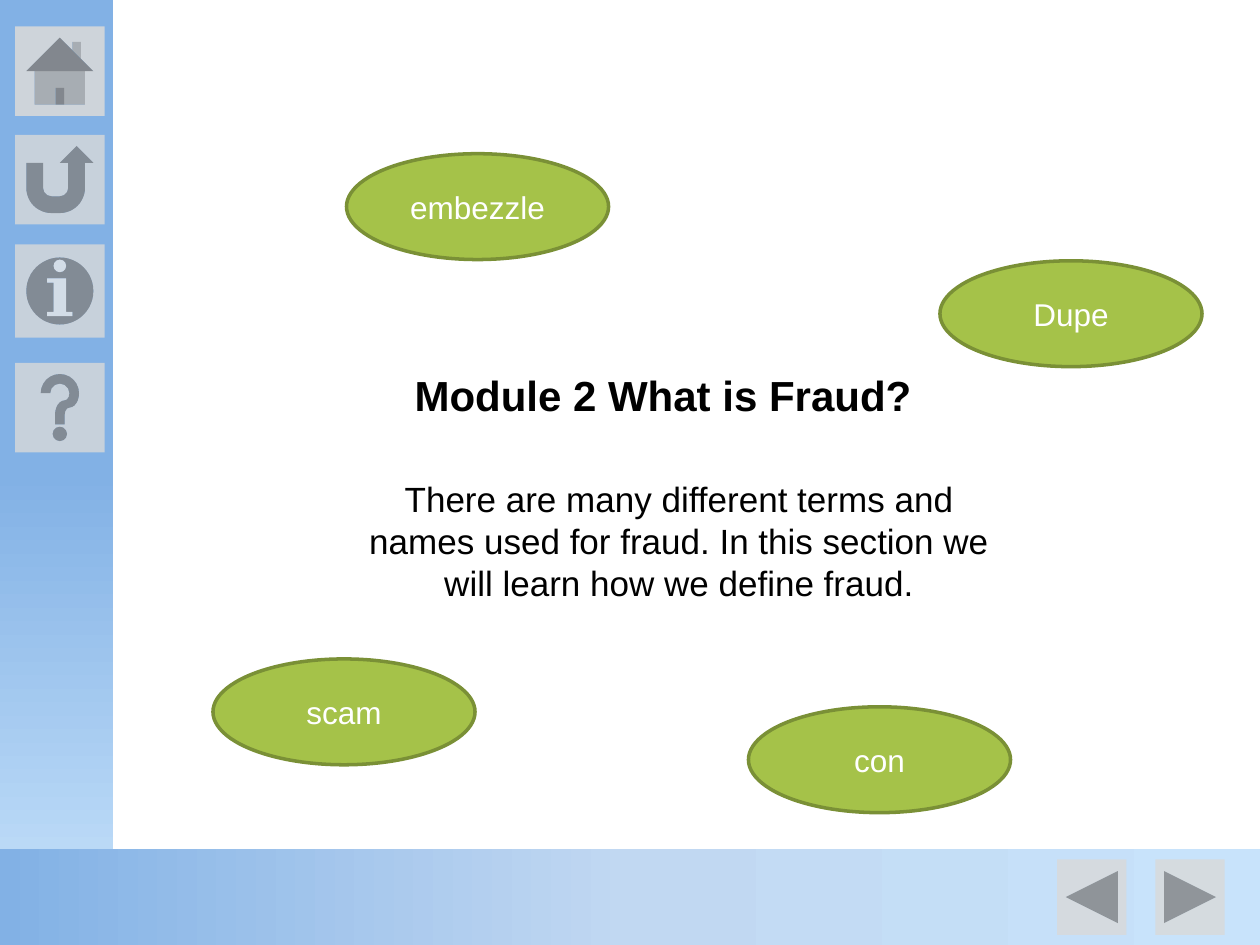
"""Build the opening slide of the fraud module with its navigation bars."""
from copy import deepcopy

from lxml.etree import SubElement
from pptx import Presentation
from pptx.dml.color import RGBColor
from pptx.enum.shapes import MSO_SHAPE as SHAPE
from pptx.enum.text import MSO_ANCHOR as ANCHOR, MSO_AUTO_SIZE as FIT, PP_ALIGN as ALIGN
from pptx.oxml.ns import qn
from pptx.util import Inches, Pt

COLORS = {"blue": "82B1E5", "mist": "C1D8F2", "sky": "C8E3FB", "button": "D9D9D9",
          "green": "A5C249", "olive": "7A9036", "white": "FFFFFF", "black": "000000"}


def add_shape(kind, *bounds):
    shape = page.shapes.add_shape(kind, *map(Inches, bounds))
    shape.shadow.inherit = False
    return shape


def set_text(shape, text, size, color, align, bold=False):
    frame = shape.text_frame
    frame.text = text
    para = frame.paragraphs[0]
    para.alignment = align
    font = para.runs[0].font
    font.name, font.size, font.bold = "Arial", Pt(size), bold
    font.color.rgb = RGBColor.from_string(COLORS[color])
    return frame


deck = Presentation()
deck.slide_width, deck.slide_height = Inches(10), Inches(7.5)
page = deck.slides.add_slide(deck.slide_layouts[5])

bars = [
    ((-3.3, 3.3, 7.5, 0.9), 270, ("blue", "blue", "sky")),
    ((0, 6.74, 10, 0.79), 0, ("sky", "mist", "blue")),
]
for bounds, rotation, names in bars:
    bar = add_shape(SHAPE.RECTANGLE, *bounds)
    bar.rotation = rotation
    bar.line.fill.background()
    bar.fill.gradient()
    bar.fill.gradient_angle = 180
    stop_list = bar._element.spPr.find(".//" + qn("a:gsLst"))
    stop_list.insert(1, deepcopy(stop_list[0]))
    for stop, position, name in zip(bar.fill.gradient_stops, (0, 0.5, 1), names):
        stop.position = position
        stop.color.rgb = RGBColor.from_string(COLORS[name])

buttons = [
    (SHAPE.ACTION_BUTTON_HOME, (0.12, 0.21, 0.71, 0.71), 88),
    (SHAPE.ACTION_BUTTON_RETURN, (0.12, 1.07, 0.71, 0.71), 80),
    (SHAPE.ACTION_BUTTON_FORWARD_OR_NEXT, (9.17, 6.82, 0.55, 0.6), 80),
    (SHAPE.ACTION_BUTTON_BACK_OR_PREVIOUS, (8.39, 6.82, 0.55, 0.6), 80),
    (SHAPE.ACTION_BUTTON_INFORMATION, (0.12, 1.94, 0.71, 0.74), 80),
    (SHAPE.ACTION_BUTTON_HELP, (0.12, 2.88, 0.71, 0.71), 80),
]
for kind, bounds, opacity in buttons:
    button = add_shape(kind, *bounds)
    button.line.fill.background()
    button.fill.solid()
    button.fill.fore_color.rgb = RGBColor.from_string(COLORS["button"])
    tint = button._element.spPr.find(".//" + qn("a:srgbClr"))
    SubElement(tint, qn("a:alpha"), val=str(opacity * 1000))

title = page.shapes.title
title.left, title.top, title.width, title.height = map(Inches, (3.19, 2.88, 4.18, 0.51))
frame = set_text(title, "Module 2 What is Fraud?", 24, "black", ALIGN.LEFT, bold=True)
frame.word_wrap = False
frame.auto_size = FIT.SHAPE_TO_FIT_TEXT
frame.vertical_anchor = ANCHOR.TOP

terms = [("embezzle", 2.75, 1.22), ("scam", 1.69, 5.23), ("con", 5.94, 5.61), ("Dupe", 7.46, 2.07)]
for term, left, top in terms:
    oval = add_shape(SHAPE.OVAL, left, top, 2.08, 0.84)
    oval.fill.solid()
    oval.fill.fore_color.rgb = RGBColor.from_string(COLORS["green"])
    oval.line.color.rgb = RGBColor.from_string(COLORS["olive"])
    oval.line.width = Pt(2)
    frame = set_text(oval, term, 18, "white", ALIGN.CENTER)
    frame.vertical_anchor = ANCHOR.MIDDLE

intro = page.shapes.add_textbox(*map(Inches, (2.75, 3.74, 5.28, 1.11)))
frame = set_text(intro, "There are many different terms and names used for fraud. "
                 "In this section we will learn how we define fraud.", 20, "black", ALIGN.CENTER)
frame.word_wrap = True
frame.auto_size = FIT.SHAPE_TO_FIT_TEXT

deck.save("out.pptx")
